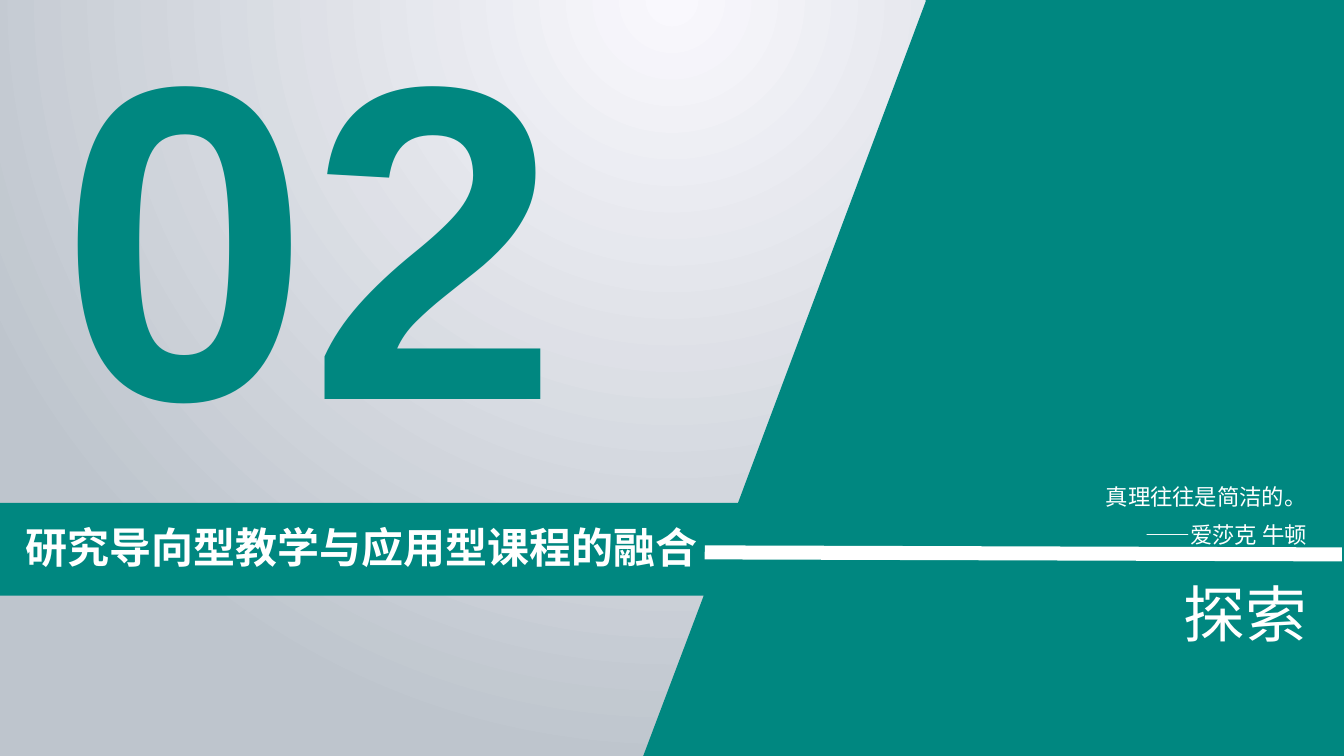
import pptx
import pptx.util
import pptx.dml.color
import pptx.enum.shapes
import pptx.enum.text
import pptx.oxml
import pptx.oxml.ns
import lxml.etree

Inches = pptx.util.Inches
TEAL, WHITE = "008780", "FFFFFF"
LATIN, CHINESE = "Arial", "Noto Sans CJK SC"
LEFT = pptx.enum.text.PP_ALIGN.LEFT
RIGHT = pptx.enum.text.PP_ALIGN.RIGHT


def rgb(value):
    return pptx.dml.color.RGBColor.from_string(value)


def fill_text(box, position, lines, size, color, font=CHINESE, bold=False,
              align=LEFT, wrap=True, spacing=1.0):
    """Place a text shape and format each line as one paragraph."""
    box.left, box.top, box.width, box.height = map(Inches, position)
    frame = box.text_frame
    frame.text = "\n".join(lines)
    frame.word_wrap = wrap
    frame.auto_size = pptx.enum.text.MSO_AUTO_SIZE.SHAPE_TO_FIT_TEXT
    frame.vertical_anchor = pptx.enum.text.MSO_ANCHOR.TOP
    for para in frame.paragraphs:
        para.alignment = align
        para.line_spacing = spacing
        para.space_before = pptx.util.Pt(0)
        for span in para.runs:
            span.font.size = pptx.util.Pt(size)
            span.font.bold = bold
            span.font.name = font
            span.font.color.rgb = rgb(color)
            east_asian = lxml.etree.SubElement(span.font._element, pptx.oxml.ns.qn("a:ea"))
            east_asian.set("typeface", CHINESE)


deck = pptx.Presentation()
deck.slide_width, deck.slide_height = Inches(13.33), Inches(7.5)
slide = deck.slides.add_slide(deck.slide_layouts[5])
shapes = slide.shapes

# Radial background, centred above the slide
background = slide.background.fill
background.gradient()
for stop, color in zip(background.gradient_stops, ("F9F8FD", "BEC5CD")):
    stop.color.rgb = rgb(color)
linear = slide.background._cSld.find(".//" + pptx.oxml.ns.qn("a:lin"))
radial = pptx.oxml.parse_xml(
    f'<a:path {pptx.oxml.ns.nsdecls("a")} path="circle">'
    '<a:fillToRect l="50000" t="-80000" r="50000" b="180000"/></a:path>')
linear.getparent().replace(linear, radial)

# Section number
number = shapes.add_textbox(0, 0, 0, 0)
fill_text(number, (0.5, -0.53, 5.18, 5.49), ["02"], 320, TEAL,
          font=LATIN, bold=True)

# Slanted panel with the title band
outline = [(9.18, 0), (13.33, 0), (13.33, 7.5), (6.38, 7.5), (6.98, 5.91),
           (0, 5.91), (0, 4.99), (7.32, 4.99), (9.18, 0.02)]
corners = [(Inches(x), Inches(y)) for x, y in outline]
builder = shapes.build_freeform(*corners[0])
builder.add_line_segments(corners[1:], close=True)
panel = builder.convert_to_shape()
panel.shadow.inherit = False
panel.fill.solid()
panel.fill.fore_color.rgb = rgb(TEAL)
panel.line.fill.background()

# Keyword, rule and quotation
keyword = shapes.add_textbox(0, 0, 0, 0)
fill_text(keyword, (11.64, 5.66, 3.09, 0.84), ["探索"], 44, WHITE)

rule = shapes.add_connector(pptx.enum.shapes.MSO_CONNECTOR.STRAIGHT,
                            Inches(6.99), Inches(5.48), Inches(13.31), Inches(5.5))
rule.line.color.rgb = rgb(WHITE)
rule.line.width = pptx.util.Pt(10)
lxml.etree.SubElement(rule._element.spPr, pptx.oxml.ns.qn("a:effectLst"))

quotation = shapes.add_textbox(0, 0, 0, 0)
fill_text(quotation, (9.13, 4.64, 3.93, 0.83), ["真理往往是简洁的。", "——爱莎克 牛顿"],
          16, WHITE, align=RIGHT, spacing=1.4)

# Title, brought in front of the panel
title = shapes.title
fill_text(title, (0.15, 5.12, 6.87, 0.6), ["研究导向型教学与应用型课程的融合"],
          30, WHITE, font=LATIN, bold=True, wrap=False)
shapes._spTree.append(title._element)

deck.save("out.pptx")
